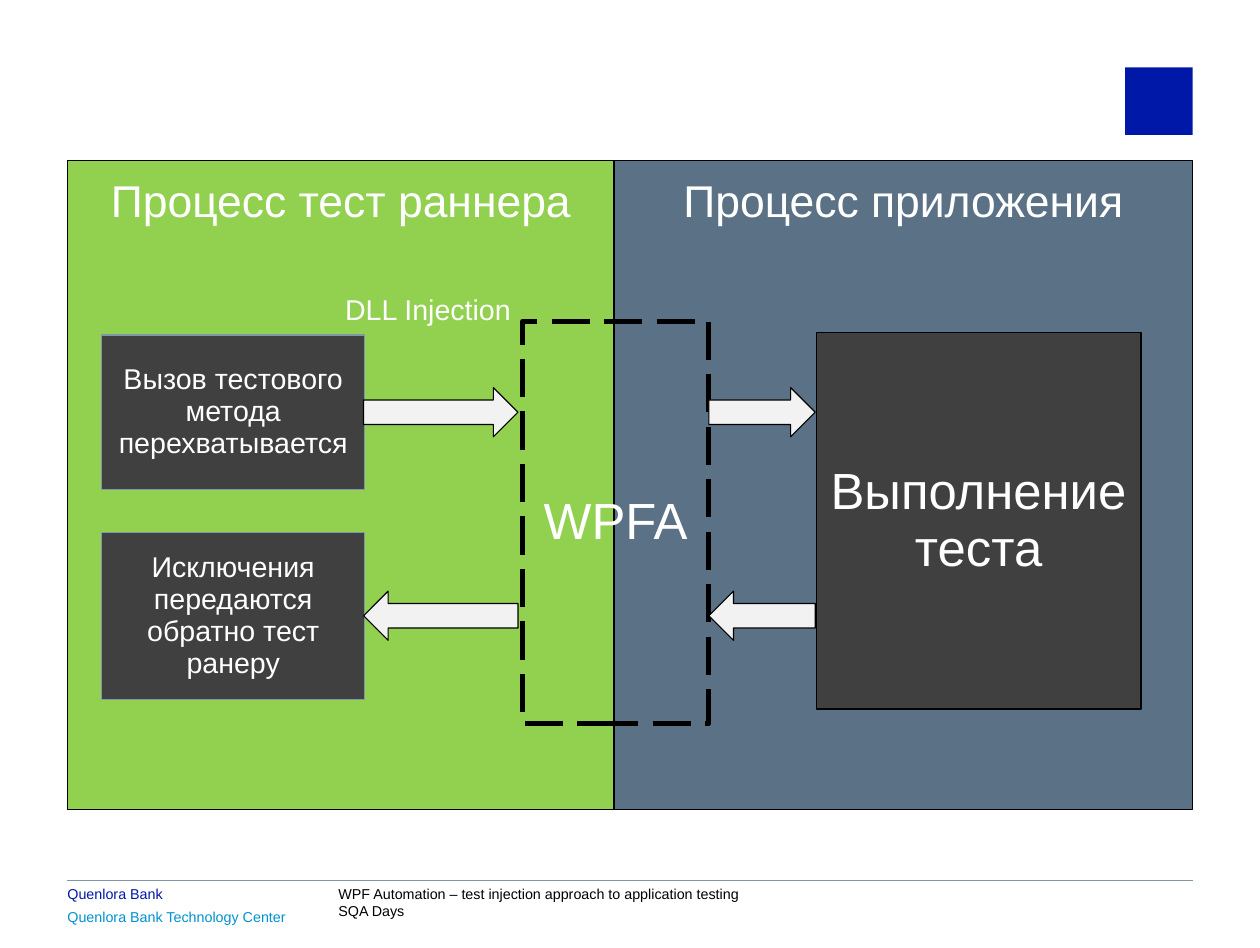
from pptx import Presentation
from pptx.dml.color import RGBColor
from pptx.enum import dml, shapes, text
from pptx.util import Inches, Pt

WHITE, BLACK, DARK, SLATE = "FFFFFF", "000000", "404040", "8296AA"
GREEN, BLUE_GREY, PALE = "92D050", "5B7186", "F2F2F2"
NAVY, SKY = "0018A8", "0092D0"
KIND = shapes.MSO_SHAPE
MARGIN, RIGHT = 0.59, 10.43


def color(value):
    return RGBColor.from_string(value)


def write(shape, wording, size=18, ink=WHITE, align=text.PP_ALIGN.CENTER,
          anchor=text.MSO_ANCHOR.MIDDLE, insets=(0.1, 0.05), wrap=True, spacing=0.93):
    frame = shape.text_frame
    frame.word_wrap = wrap
    frame.vertical_anchor = anchor
    frame.margin_left = frame.margin_right = Inches(insets[0])
    frame.margin_top = frame.margin_bottom = Inches(insets[1])
    frame.text = wording
    for para in frame.paragraphs:
        para.alignment = align
        para.line_spacing = spacing
        for span in para.runs:
            span.font.name = "Arial"
            span.font.size = Pt(size)
            span.font.color.rgb = color(ink)


def add_label(page, box, wording, **style):
    label = page.shapes.add_textbox(*map(Inches, box))
    write(label, wording, **{"anchor": text.MSO_ANCHOR.TOP, **style})


def add_block(page, box, fill=None, line=BLACK, width=0.75, kind=KIND.RECTANGLE):
    block = page.shapes.add_shape(kind, *map(Inches, box))
    block.shadow.inherit = False
    if fill:
        block.fill.solid()
        block.fill.fore_color.rgb = color(fill)
    else:
        block.fill.background()
    if line:
        block.line.color.rgb = color(line)
        block.line.width = Pt(width)
    else:
        block.line.fill.background()
    return block


def add_process(page, box, title, fill):
    """A coloured half of the diagram with its heading."""
    left, top, width, _ = box
    add_block(page, box, fill)
    add_label(page, (left, top + 0.11, width, 0.53), title, size=28)


def add_runner_steps(page, box):
    left, top, width, height = box
    call, errors = 1.35, 1.46
    steps = [
        (top, call, "Вызов тестового метода перехватывается"),
        (top + height - errors, errors, "Исключения передаются обратно тест ранеру"),
    ]
    for step_top, step_height, wording in steps:
        step = add_block(page, (left, step_top, width, step_height), DARK, SLATE)
        write(step, wording)


def add_bridge(page, box):
    """The dashed frame that spans both processes."""
    left, top, _, _ = box
    frame = add_block(page, box, width=3)
    frame.line.dash_style = dml.MSO_LINE.LONG_DASH
    write(frame, "WPFA", size=32)
    add_label(page, (left - 1.65, top - 0.28, 1.66, 0.38), "DLL Injection",
              align=text.PP_ALIGN.LEFT, wrap=False)


def add_arrows(page, gaps, top, kind):
    for left, width in gaps:
        add_block(page, (left, top, width, 0.43), PALE, kind=kind)


def add_footer(page, box):
    left, top, width, _ = box
    rule = page.shapes.add_connector(
        shapes.MSO_CONNECTOR.STRAIGHT,
        *map(Inches, (left, top, left + width, top)))
    rule.line.color.rgb = color(SLATE)
    rule.line.width = Pt(0.5)
    properties = rule._element.spPr
    properties.append(properties.makeelement(
        "{http://schemas.openxmlformats.org/drawingml/2006/main}effectLst", {}))
    entries = [
        (0, 0.04, 2.2, 0.15, "Quenlora Bank", NAVY),
        (0, 0.24, 2.2, 0.15, "Quenlora Bank Technology Center", SKY),
        (2.37, 0.04, 4.5, 0.3, "WPF Automation – test injection approach to "
         "application testing\nSQA Days", BLACK),
    ]
    for across, down, entry_width, height, wording, ink in entries:
        add_label(page, (left + across, top + down, entry_width, height), wording,
                  size=9, ink=ink, align=text.PP_ALIGN.LEFT, insets=(0, 0), spacing=1)


def main():
    deck = Presentation()
    deck.slide_width, deck.slide_height = Inches(11.02), Inches(8.29)
    page = deck.slides.add_slide(deck.slide_layouts[6])

    add_footer(page, (MARGIN, 7.7, RIGHT - MARGIN, 0.59))
    add_block(page, (RIGHT - 0.59, 0.59, 0.59, 0.59), NAVY, line=None)

    middle = 5.37
    add_process(page, (middle, 1.4, RIGHT - middle, 5.68), "Процесс приложения", BLUE_GREY)
    add_process(page, (MARGIN, 1.4, middle - MARGIN, 5.68), "Процесс тест раннера", GREEN)
    add_bridge(page, (4.57, 2.81, 1.63, 3.52))
    execution = add_block(page, (7.14, 2.91, 2.84, 3.29), DARK)
    write(execution, "Выполнение теста", size=32)
    add_runner_steps(page, (0.89, 2.93, 2.3, 3.19))

    gaps = [(3.18, 1.35), (6.2, 0.93)]
    add_arrows(page, gaps, 3.39, KIND.RIGHT_ARROW)
    add_arrows(page, gaps, 5.17, KIND.LEFT_ARROW)

    deck.save("out.pptx")


if __name__ == "__main__":
    main()
